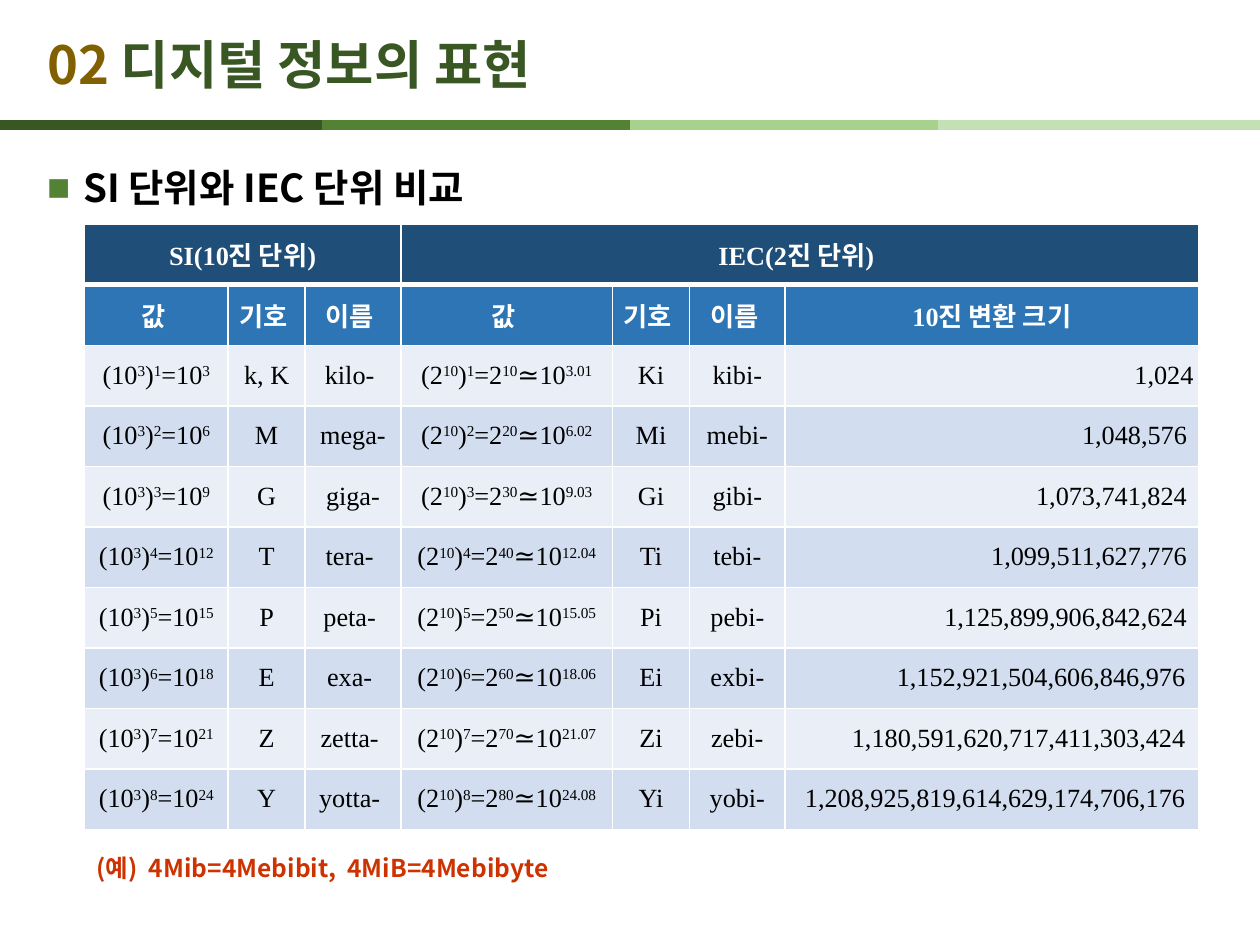
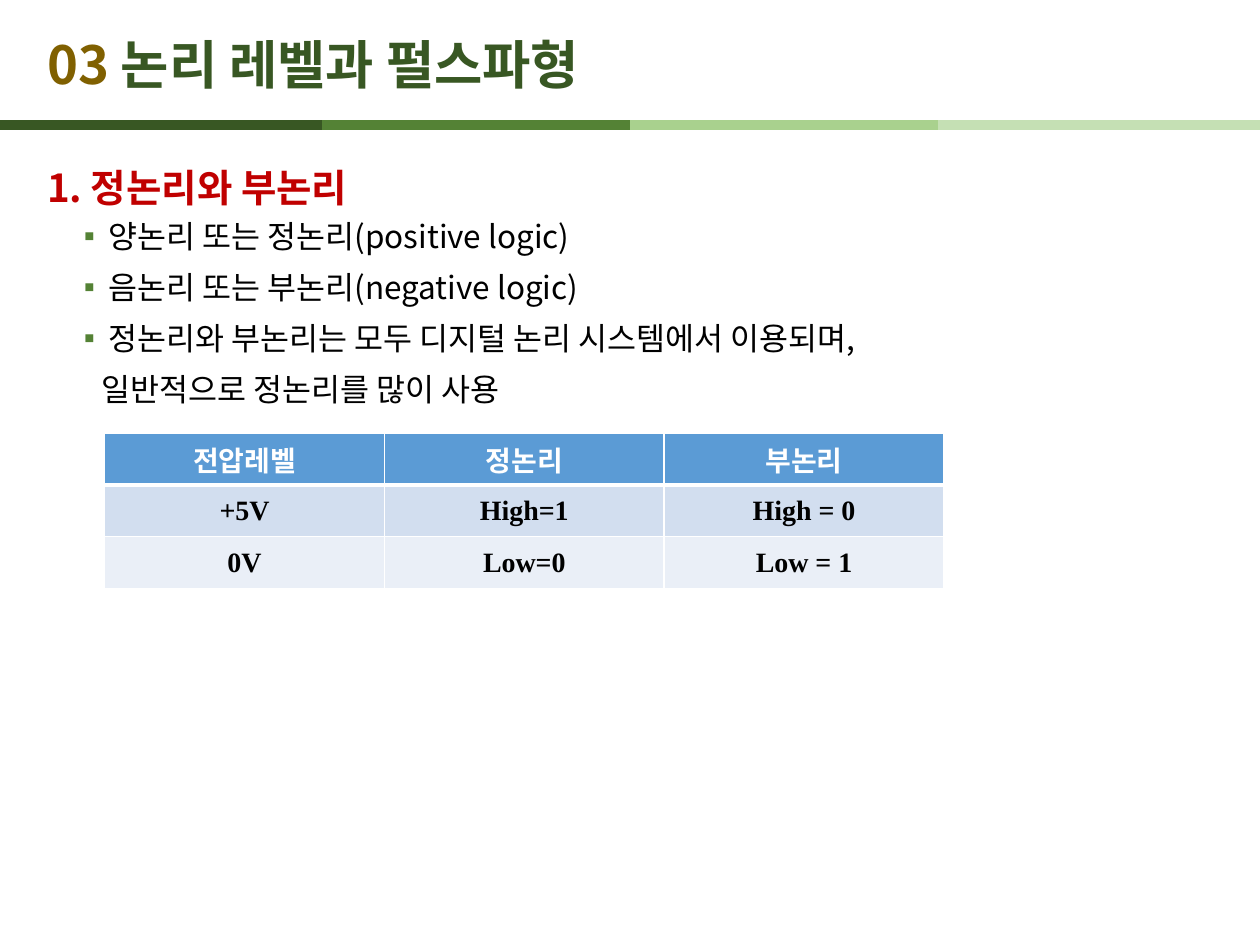
"""Build two slides on digital units and logic levels."""
from lxml import etree
from pptx import Presentation
from pptx.dml.color import RGBColor
from pptx.enum.shapes import MSO_CONNECTOR
from pptx.enum.text import MSO_ANCHOR, PP_ALIGN
from pptx.oxml.ns import qn
from pptx.util import Cm, Pt

STRAIGHT = MSO_CONNECTOR.STRAIGHT
MIDDLE = MSO_ANCHOR.MIDDLE
CENTER, RIGHT = PP_ALIGN.CENTER, PP_ALIGN.RIGHT

SANS, SERIF = "Noto Sans CJK KR", "Times New Roman"
COLORS = {
    "number": "806000", "title": "385723", "bullet": "548235",
    "black": "000000", "white": "FFFFFF", "red": "C00000", "note": "CC3300",
    "navy": "1F4E79", "blue": "2E75B6", "sky": "5B9BD5",
    "pale": "EAEFF7", "tint": "D2DEEF",
}
BAND = ["385723", "548235", "A9D18E", "C5E0B4"]
BAND_STARTS = [0, 6.5, 12.7, 18.9]
BAND_LENGTH, BAND_Y = 6.5, 2.52

TITLE = {"size": Pt(30), "bold": True, "name": SANS}
HEADING = {"size": Pt(22), "bold": True, "name": SANS}
ITEM = {"size": Pt(18), "bold": False, "name": SANS}
NOTE = {"size": Pt(14), "bold": True, "name": SANS}
UNIT_HEAD = {"size": Pt(15), "bold": True, "name": SERIF}
UNIT_CELL = {**UNIT_HEAD, "bold": False}
LEVEL_CELL = {"size": Pt(16), "bold": True, "name": SERIF}
HEADING_PARA = {"line_spacing": 1.5}
ITEM_PARA = {"line_spacing": 1.0, "space_before": Pt(3.6), "space_after": Pt(4)}

UNIT_COLS = [2.9, 1.55, 1.93, 4.27, 1.55, 1.93, 8.33]
UNIT_HEADS = ["값 ", "기호 ", "이름 ", "값 ", "기호 ", "이름 ", "10진 변환 크기"]
PREFIXES = [
    ("k, K", "kilo- ", "Ki", "kibi-"), ("M", "mega-", "Mi", "mebi-"),
    ("G", "giga-", "Gi", "gibi-"), ("T", "tera- ", "Ti", "tebi-"),
    ("P", "peta- ", "Pi", "pebi-"), ("E", "exa- ", "Ei", "exbi-"),
    ("Z", "zetta- ", "Zi", "zebi-"), ("Y", "yotta- ", "Yi", "yobi-"),
]
DECIMAL_INSETS = [0.1] + [0.23] * 4 + [0.26] * 3
LOGIC_ITEMS = [
    "양논리 또는 정논리(positive logic)",
    "음논리 또는 부논리(negative logic)",
    "정논리와 부논리는 모두 디지털 논리 시스템에서 이용되며,",
]
LEVELS = [
    ["전압레벨", "정논리", "부논리"],
    ["+5V", "High=1", "High = 0"],
    ["0V", "Low=0", "Low = 1"],
]


def apply(target, values):
    """Set each attribute named in a dict of format values."""
    for name, value in values.items():
        setattr(target, name, value)


def add_run(p, text, fmt, color, raised=False):
    """Append a formatted run with an East Asian font."""
    r = p.add_run()
    r.text = text
    apply(r.font, fmt)
    r.font.color.rgb = RGBColor.from_string(COLORS[color])
    rPr = r.font._element
    etree.SubElement(rPr, qn("a:ea"), typeface=SANS)
    if raised:
        rPr.set("baseline", "30000")


def add_powers(p, text, fmt, color):
    """Append text in which the parts between carets are superscripts."""
    for i, part in enumerate(text.split("^")):
        if part:
            add_run(p, part, fmt, color, raised=i % 2 == 1)


def add_text_box(s, left, top, width, height, wrap=True):
    """Add a text box and return its text frame."""
    tf = s.shapes.add_textbox(Cm(left), Cm(top), Cm(width), Cm(height)).text_frame
    tf.word_wrap = wrap
    return tf


def set_indent(p, left, hanging=0, bullet=None):
    """Indent a paragraph and give it an optional bullet."""
    pPr = p._p.get_or_add_pPr()
    pPr.set("marL", str(Cm(left)))
    pPr.set("indent", str(-Cm(hanging)))
    if bullet:
        clr = etree.SubElement(pPr, qn("a:buClr"))
        etree.SubElement(clr, qn("a:srgbClr"), val=COLORS["bullet"])
        etree.SubElement(pPr, qn("a:buFont"), typeface=SERIF)
        etree.SubElement(pPr, qn("a:buChar"), char=bullet)


def add_band(s):
    """Draw the four-coloured rule under the title."""
    for x, color in zip(BAND_STARTS, BAND):
        line = s.shapes.add_connector(
            STRAIGHT, Cm(x), Cm(BAND_Y), Cm(x + BAND_LENGTH), Cm(BAND_Y))
        line.line.color.rgb = RGBColor.from_string(color)
        line.line.width = Pt(6)
        etree.SubElement(line._element.spPr, qn("a:effectLst"))


def add_slide(prs, number, title):
    """Add a blank slide with the shared band and title."""
    s = prs.slides.add_slide(prs.slide_layouts[6])
    add_band(s)
    tf = add_text_box(s, 0.7, 0.51, 21, 1.52)
    tf.vertical_anchor = MIDDLE
    p = tf.paragraphs[0]
    add_run(p, number + " ", TITLE, "number")
    add_run(p, title, TITLE, "title")
    return s


def add_body(s, heading, color):
    """Add the body box with its heading and return its text frame."""
    tf = add_text_box(s, 0.7, 2.72, 24, 15.19)
    p = tf.paragraphs[0]
    apply(p, HEADING_PARA)
    add_run(p, heading, HEADING, color)
    return tf


def set_borders(cell, top, bottom):
    """Give a cell white borders with the given top and bottom widths."""
    tcPr = cell._tc.get_or_add_tcPr()
    widths = {"lnL": 1, "lnR": 1, "lnT": top, "lnB": bottom}
    for i, (tag, width) in enumerate(widths.items()):
        ln = etree.Element(qn("a:" + tag), w=str(Pt(width)))
        fill = etree.SubElement(ln, qn("a:solidFill"))
        etree.SubElement(fill, qn("a:srgbClr"), val=COLORS["white"])
        tcPr.insert(i, ln)


def add_grid(s, left, top, cols, row_height, rows):
    """Add an unstyled table with white borders, heavy below the first row."""
    table = s.shapes.add_table(
        rows, len(cols), Cm(left), Cm(top), Cm(sum(cols)), Cm(row_height * rows)).table
    table.horz_banding = False
    for col, width in zip(table.columns, cols):
        col.width = Cm(width)
    for i, row in enumerate(table.rows):
        row.height = Cm(row_height)
        for cell in row.cells:
            set_borders(cell, 3 if i == 1 else 1, 3 if i == 0 else 1)
    return table


def fill_cell(cell, text, fmt, color, fill, align=CENTER, right=0):
    """Write one table cell."""
    cell.fill.solid()
    cell.fill.fore_color.rgb = RGBColor.from_string(COLORS[fill])
    apply(cell, {"vertical_anchor": MIDDLE, "margin_left": 0, "margin_top": 0,
                 "margin_bottom": 0, "margin_right": Cm(right)})
    p = cell.text_frame.paragraphs[0]
    p.alignment = align
    add_powers(p, text, fmt, color)


def add_unit_table(s):
    """Add the table that compares SI and IEC prefixes."""
    table = add_grid(s, 1.7, 4.52, UNIT_COLS, 1.22, len(PREFIXES) + 2)
    for first, last, text in [(0, 2, "SI(10진 단위)"), (3, 6, "IEC(2진 단위) ")]:
        table.cell(0, first).merge(table.cell(0, last))
        fill_cell(table.cell(0, first), text, UNIT_HEAD, "white", "navy")
    for j, text in enumerate(UNIT_HEADS):
        fill_cell(table.cell(1, j), text, UNIT_HEAD, "white", "blue")
    for n, (si, si_name, iec, iec_name) in enumerate(PREFIXES, 1):
        fill = "pale" if n % 2 else "tint"
        texts = [
            f"(10^3^)^{n}^=10^{3 * n}^", si, si_name,
            f"(2^10^)^{n}^=2^{10 * n}^≃10^{3.01 * n:.2f}^", iec, iec_name,
        ]
        for j, text in enumerate(texts):
            fill_cell(table.cell(n + 1, j), text, UNIT_CELL, "black", fill)
        fill_cell(table.cell(n + 1, 6), f"{1024 ** n:,}", UNIT_CELL, "black", fill,
                  RIGHT, DECIMAL_INSETS[n - 1])


def add_level_table(s):
    """Add the table of voltage levels in both logics."""
    table = add_grid(s, 2.11, 8.74, [5.64] * 3, 1.04, len(LEVELS))
    styles = [("white", "sky"), ("black", "tint"), ("black", "pale")]
    for i, (row, (color, fill)) in enumerate(zip(LEVELS, styles)):
        for j, text in enumerate(row):
            fill_cell(table.cell(i, j), text, LEVEL_CELL, color, fill)


def build_units(prs):
    """Build the slide on SI and IEC units."""
    s = add_slide(prs, "02", "디지털 정보의 표현")
    tf = add_body(s, "SI 단위와 IEC 단위 비교", "black")
    set_indent(tf.paragraphs[0], 0.73, 0.73, "■")
    add_unit_table(s)
    note = add_text_box(s, 1.7, 17.07, 10.03, 0.86, wrap=False)
    add_run(note.paragraphs[0], "(예)  4Mib=4Mebibit,  4MiB=4Mebibyte", NOTE, "note")


def build_logic(prs):
    """Build the slide on positive and negative logic."""
    s = add_slide(prs, "03", "논리 레벨과 펄스파형")
    tf = add_body(s, "1. 정논리와 부논리", "red")
    for text in LOGIC_ITEMS:
        p = tf.add_paragraph()
        apply(p, ITEM_PARA)
        set_indent(p, 1.24, 0.5, "▪")
        add_run(p, text, ITEM, "black")
    p = tf.add_paragraph()
    apply(p, ITEM_PARA)
    set_indent(p, 1.1)
    add_run(p, "일반적으로 정논리를 많이 사용", ITEM, "black")
    add_level_table(s)


def main():
    """Create the presentation and save it."""
    prs = Presentation()
    prs.slide_width, prs.slide_height = Cm(25.4), Cm(19.05)
    build_units(prs)
    build_logic(prs)
    prs.save("out.pptx")


if __name__ == "__main__":
    main()
